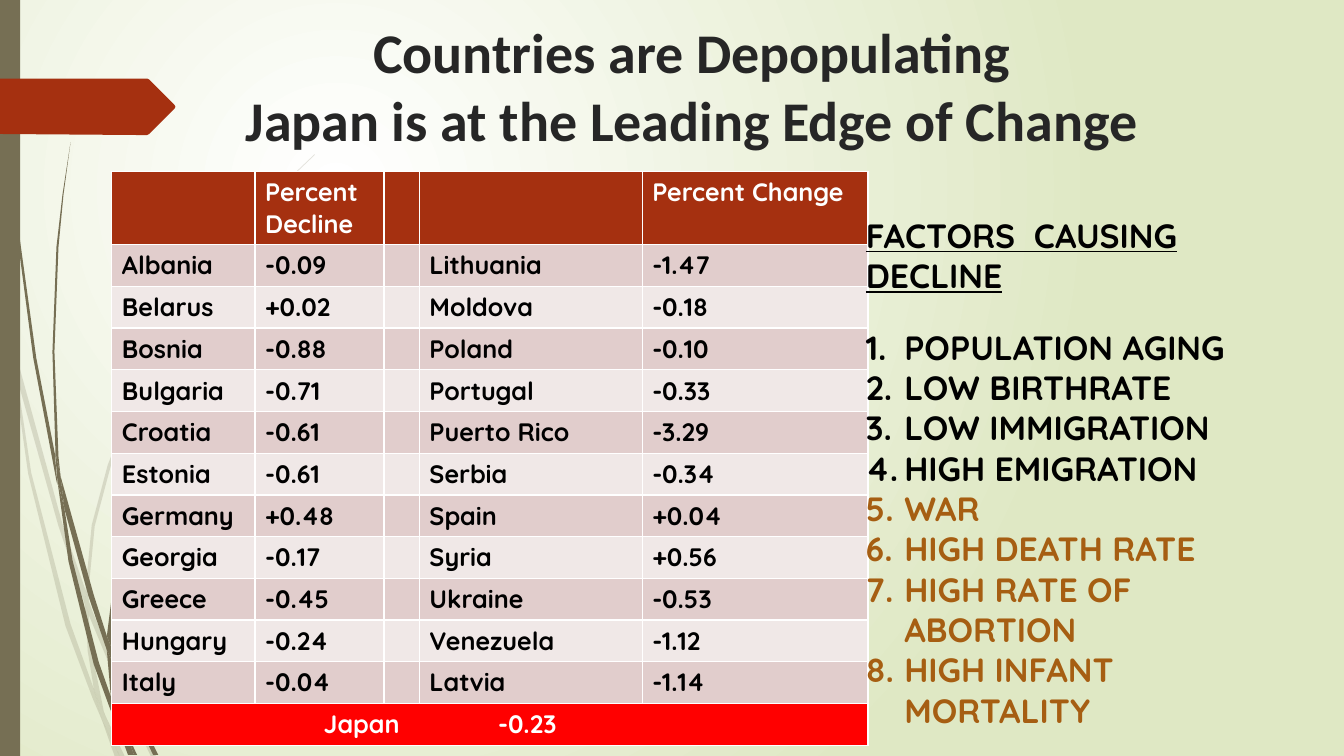
from copy import deepcopy

from lxml import etree
from pptx import Presentation
from pptx.dml.color import RGBColor
from pptx.enum.shapes import MSO_SHAPE
from pptx.enum.text import MSO_ANCHOR, MSO_AUTO_SIZE, PP_ALIGN
from pptx.oxml.ns import qn
from pptx.util import Inches, Pt

RECT = MSO_SHAPE.RECTANGLE
MIDDLE = MSO_ANCHOR.MIDDLE
FIXED, GROW = MSO_AUTO_SIZE.NONE, MSO_AUTO_SIZE.SHAPE_TO_FIT_TEXT
LEFT, CENTER = PP_ALIGN.LEFT, PP_ALIGN.CENTER

WHITE = RGBColor(0xFF, 0xFF, 0xFF)
BLACK = RGBColor(0, 0, 0)
GREEN = RGBColor(0xDF, 0xE8, 0xC4)
OLIVE = RGBColor(0x76, 0x6F, 0x54)
RUST = RGBColor(0xA5, 0x30, 0x10)
BROWN = RGBColor(0xA6, 0x5E, 0x12)
INK = RGBColor(0x26, 0x26, 0x26)
RED = RGBColor(0xFF, 0, 0)
BANDS = RGBColor(0xE1, 0xCD, 0xCC), RGBColor(0xF0, 0xE8, 0xE7)

PALE = [
    [(11, 350), (9, 322), (0, 282), (0, 299), (10, 344)],
    [(58, 522), (84, 599), (85, 586), (62, 520), (14, 345), (17, 376)],
    [(92, 607), (88, 596), (88, 610), (123, 694), (150, 751), (155, 751), (127, 692)],
    [(119, 751), (124, 751), (105, 711)],
    [(93, 683), (70, 619), (31, 469), (17, 376), (11, 350), (28, 470), (65, 621),
     (92, 693), (101, 714), (99, 707)],
    [(84, 599), (87, 646), (93, 683), (96, 692), (105, 711), (103, 706), (91, 646),
     (88, 610), (88, 608)],
    [(88, 584), (94, 522), (110, 462), (132, 404), (160, 349), (193, 296), (229, 245),
     (268, 198), (290, 175), (312, 154), (312, 153), (289, 175), (268, 197), (228, 244),
     (191, 295), (158, 348), (130, 403), (107, 461), (91, 521), (85, 584), (85, 586),
     (88, 596)],
    [(101, 714), (114, 751), (119, 751)],
    [(88, 608), (88, 610), (88, 596), (85, 586), (84, 599)],
    [(96, 692), (93, 683), (99, 707), (101, 714), (119, 751), (105, 711)],
]
DARK = [
    [(7, 110), (17, 233), (33, 355), (56, 477), (57, 481), (55, 457), (55, 453),
     (36, 355), (19, 232), (8, 109), (5, 48), (4, 0), (3, 0), (4, 48)],
    [(88, 592), (106, 645), (106, 633), (106, 631), (93, 590), (60, 472), (64, 505)],
    [(113, 649), (110, 641), (111, 656), (132, 708), (152, 749), (157, 749), (136, 706)],
    [(110, 691), (98, 657), (72, 556), (64, 505), (57, 477), (68, 557), (93, 659),
     (111, 708), (117, 722), (116, 717)],
    [(60, 472), (58, 453), (54, 349), (58, 245), (63, 193), (70, 141), (62, 193),
     (56, 245), (52, 349), (55, 449)],
    [(133, 749), (136, 749), (122, 719)],
    [(57, 477), (64, 505), (60, 472), (55, 449), (55, 453)],
    [(111, 633), (115, 592), (125, 552), (140, 513), (158, 476), (180, 440), (205, 406),
     (231, 374), (245, 359), (261, 344), (260, 344), (245, 358), (231, 373), (204, 405),
     (179, 439), (156, 474), (137, 512), (122, 551), (111, 591), (106, 631), (110, 641)],
    [(117, 722), (127, 749), (131, 749)],
    [(106, 645), (110, 691), (116, 706), (122, 719), (121, 716), (111, 656), (109, 651)],
    [(106, 645), (109, 651), (111, 656), (110, 641), (106, 631), (106, 633)],
    [(116, 706), (110, 691), (116, 717), (117, 722), (130, 749), (133, 749), (122, 719)],
]
ARROW = [(173, 108), (148, 133), (146, 134), (136, 134), (0, 133), (0, 78), (146, 78),
         (148, 79), (173, 104), (174, 106)]

HEAD = ["", "Percent Decline", "", "", "Percent Change"]
RATES = [
    ("Albania", "-0.09", "Lithuania", "-1.47"),
    ("Belarus", "+0.02", "Moldova", "-0.18"),
    ("Bosnia", "-0.88", "Poland", "-0.10"),
    ("Bulgaria", "-0.71", "Portugal", "-0.33"),
    ("Croatia", "-0.61", "Puerto Rico", "-3.29"),
    ("Estonia", "-0.61", "Serbia", "-0.34"),
    ("Germany", "+0.48", "Spain", "+0.04"),
    ("Georgia", "-0.17", "Syria", "+0.56"),
    ("Greece", "-0.45", "Ukraine", "-0.53"),
    ("Hungary", "-0.24", "Venezuela", "-1.12"),
    ("Italy", "-0.04", "Latvia", "-1.14"),
]
WIDTHS = [1.42, 1.28, 0.35, 2.21, 1.28]
CAUSES = ["POPULATION AGING", "LOW BIRTHRATE", "LOW IMMIGRATION", "HIGH EMIGRATION",
          "WAR", "HIGH DEATH RATE", "HIGH RATE OF ABORTION", "HIGH INFANT MORTALITY"]


def write(par, text, size=18, font="Quicksand", color=BLACK, line=False, align=LEFT):
    par.text = text
    par.alignment = align
    for run in par.runs:
        run.font.size = Pt(size)
        run.font.name = font
        run.font.bold = True
        run.font.underline = line
        run.font.color.rgb = color
    for gap in par._p.findall(qn("a:br")):
        gap.append(deepcopy(par.runs[0]._r.rPr))


class Deck:
    def __init__(self):
        self.show = Presentation()
        self.show.slide_width, self.show.slide_height = Inches(13.33), Inches(7.5)
        self.slide = self.show.slides.add_slide(self.show.slide_layouts[5])
        self.shapes = self.slide.shapes

    def ground(self):
        fill = self.slide.background.fill
        fill.gradient()
        for stop, color in zip(fill.gradient_stops, (WHITE, GREEN)):
            stop.color.rgb = color
        line = self.slide.element.find(".//" + qn("a:lin"))
        glow = etree.SubElement(line.getparent(), qn("a:path"), path="circle")
        etree.SubElement(glow, qn("a:fillToRect"), l="50000", t="50000", r="100000", b="100000")
        line.getparent().remove(line)

    def paint(self, shape, color, alpha=100):
        shape.shadow.inherit = False
        shape.fill.solid()
        shape.fill.fore_color.rgb = color
        shape.line.fill.background()
        if alpha < 100:
            tint = shape._element.spPr.find(".//" + qn("a:srgbClr"))
            etree.SubElement(tint, qn("a:alpha"), val=str(alpha * 1000))

    def outline(self, points, color, alpha=100):
        pen = self.shapes.build_freeform(*points[0], scale=Inches(0.01))
        pen.add_line_segments(points[1:])
        self.paint(pen.convert_to_shape(), color, alpha)

    def bar(self, x, y, w, h, color):
        self.paint(self.shapes.add_shape(RECT, Inches(x), Inches(y), Inches(w), Inches(h)), color)

    def title(self, text, x, y, w, h):
        box = self.shapes.title
        box.left, box.top, box.width, box.height = map(Inches, (x, y, w, h))
        frame = box.text_frame
        frame.auto_size = FIXED
        frame.vertical_anchor = MIDDLE
        write(frame.paragraphs[0], text, size=40, font="Calibri", color=INK, align=CENTER)
        box._element.getparent().append(box._element)

    def cell(self, cell, text, back, color):
        cell.fill.solid()
        cell.fill.fore_color.rgb = back
        write(cell.text_frame.paragraphs[0], text, color=color)

    def table(self, x, y, high):
        rows = [HEAD] + [(a, b, "", c, d) for a, b, c, d in RATES]
        grid = self.shapes.add_table(len(rows) + 1, len(WIDTHS), Inches(x), Inches(y),
                                     Inches(sum(WIDTHS)), Inches(high * (len(rows) + 1))).table
        for col, width in zip(grid.columns, WIDTHS):
            col.width = Inches(width)
        for i, row in enumerate(rows):
            back = BANDS[(i - 1) % 2] if i else RUST
            for j, text in enumerate(row):
                self.cell(grid.cell(i, j), text, back, BLACK if i else WHITE)
        last = grid.cell(len(rows), 0)
        last.merge(grid.cell(len(rows), len(WIDTHS) - 1))
        self.cell(last, "Japan\t-0.23", RED, WHITE)
        last.margin_left = Inches(2.1)
        tabs = etree.SubElement(last.text_frame.paragraphs[0]._p.pPr, qn("a:tabLst"))
        etree.SubElement(tabs, qn("a:tab"), pos=str(Inches(1.73)), algn="l")

    def causes(self, x, y, w, h):
        frame = self.shapes.add_textbox(Inches(x), Inches(y), Inches(w), Inches(h)).text_frame
        frame.word_wrap = True
        frame.auto_size = GROW
        head = frame.paragraphs[0]
        write(head, "FACTORS  CAUSING DECLINE", size=24, line=True)
        head.space_after = Pt(22.5)
        for i, text in enumerate(CAUSES):
            par = frame.add_paragraph()
            write(par, text, size=24, color=BLACK if i < 4 else BROWN)
            props = par._p.pPr
            props.set("marL", str(Inches(0.38)))
            props.set("indent", str(Inches(-0.38)))
            etree.SubElement(props, qn("a:buFont"), typeface="+mj-lt")
            etree.SubElement(props, qn("a:buAutoNum"), type="arabicPeriod")


def main():
    deck = Deck()
    deck.ground()
    for blade in PALE:
        deck.outline(blade, OLIVE, alpha=20)
    for blade in DARK:
        deck.outline(blade, OLIVE)
    deck.bar(0, 0, 0.2, 7.5, OLIVE)
    deck.outline(ARROW, RUST)
    deck.title("Countries are Depopulating\vJapan is at the Leading Edge of Change",
               1.11, 0.12, 11.5, 1.45)
    deck.table(1.11, 1.7, 0.41)
    deck.causes(8.49, 2.08, 4.39, 4.34)
    deck.show.save("out.pptx")


if __name__ == "__main__":
    main()
